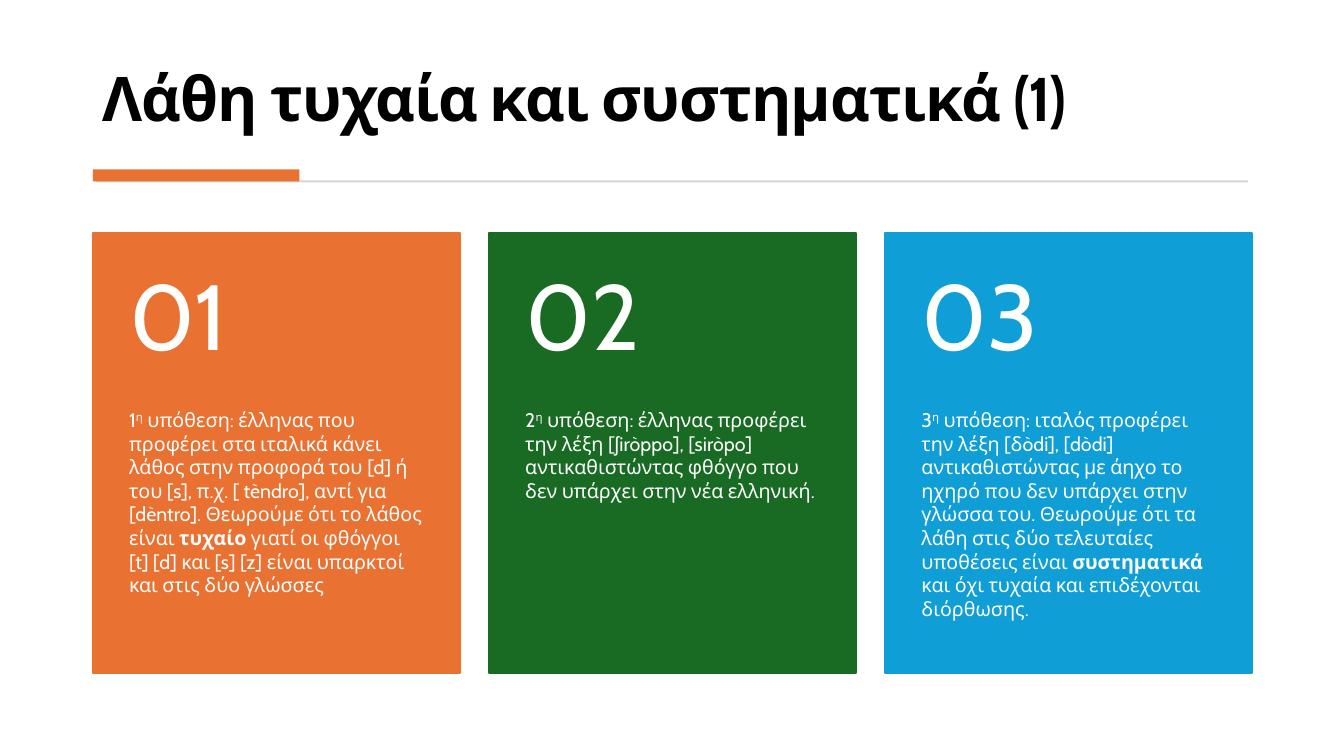
from pptx import Presentation
from pptx.dml.color import RGBColor
from pptx.enum.shapes import MSO_SHAPE
from pptx.enum.text import MSO_ANCHOR, PP_ALIGN
from pptx.util import Pt

PX = 9144
RECT = MSO_SHAPE.RECTANGLE
TOP, MIDDLE, BOTTOM = MSO_ANCHOR.TOP, MSO_ANCHOR.MIDDLE, MSO_ANCHOR.BOTTOM
LEFT = PP_ALIGN.LEFT

FONT = "Cabin"
BLACK = RGBColor(0x00, 0x00, 0x00)
WHITE = RGBColor(0xFF, 0xFF, 0xFF)
GREY = RGBColor(0xD5, 0xD5, 0xD5)
ORANGE = RGBColor(0xE9, 0x71, 0x32)
GREEN = RGBColor(0x19, 0x6B, 0x24)
BLUE = RGBColor(0x0F, 0x9E, 0xD5)

PLAIN, BOLD, SUPER = "plain", "bold", "super"

CARDS = [
    (ORANGE, [
        ("1", PLAIN), ("η", SUPER),
        (" υπόθεση: έλληνας που προφέρει στα ιταλικά κάνει λάθος στην προφορά "
         "του [d] ή του [s], π.χ. [ tèndro], αντί για [dèntro]. Θεωρούμε ότι "
         "το λάθος είναι ", PLAIN),
        ("τυχαίο", BOLD),
        (" γιατί οι φθόγγοι [t] [d] και [s] [z] είναι υπαρκτοί και στις δύο "
         "γλώσσες", PLAIN),
    ]),
    (GREEN, [
        ("2", PLAIN), ("η", SUPER),
        (" υπόθεση: έλληνας προφέρει την λέξη [ʃiròppo], [siròpo] "
         "αντικαθιστώντας φθόγγο που δεν υπάρχει στην νέα ελληνική.", PLAIN),
    ]),
    (BLUE, [
        ("3", PLAIN), ("η", SUPER),
        (" υπόθεση: ιταλός προφέρει την λέξη [δòdi], [dòdi] αντικαθιστώντας "
         "με άηχο το ηχηρό που δεν υπάρχει στην γλώσσα του. Θεωρούμε ότι τα "
         "λάθη στις δύο τελευταίες υποθέσεις είναι ", PLAIN),
        ("συστηματικά", BOLD),
        (" και όχι τυχαία και επιδέχονται διόρθωσης.", PLAIN),
    ]),
]


def emu(*lengths):
    return [length * PX for length in lengths]


def add_rect(slide, box, color, line_width=None):
    sp = slide.shapes.add_shape(RECT, *emu(*box))
    sp.shadow.inherit = False
    sp.fill.solid()
    sp.fill.fore_color.rgb = color
    if line_width:
        sp.line.color.rgb = color
        sp.line.width = Pt(line_width)
    else:
        sp.line.fill.background()


def add_text(slide, box, runs, size, color=WHITE, anchor=TOP,
             insets=(10, 5, 10, 5), line_spacing=1.0, tracking=0):
    tf = slide.shapes.add_textbox(*emu(*box)).text_frame
    tf.word_wrap = True
    tf.vertical_anchor = anchor
    (tf.margin_left, tf.margin_top,
     tf.margin_right, tf.margin_bottom) = emu(*insets)
    p = tf.paragraphs[0]
    p.alignment = LEFT
    p.line_spacing = line_spacing
    for text, style in runs:
        r = p.add_run()
        r.text = text
        r.font.name = FONT
        r.font.size = Pt(size)
        r.font.color.rgb = color
        r.font.bold = style == BOLD
        rPr = r.font._element
        if style == SUPER:
            rPr.set("baseline", "30000")
        if tracking:
            rPr.set("spc", str(tracking))


def add_header(slide, box):
    x, y, w, h = box
    add_text(slide, (x, y, w, 111), [("Λάθη τυχαία και συστηματικά (1)", BOLD)],
             44, color=BLACK, anchor=BOTTOM, line_spacing=0.9, tracking=-70)
    add_rect(slide, (x + 3, y + h - 1, w - 6, 2), GREY)
    add_rect(slide, (x, y + h - 12, 205, 12), ORANGE)


def add_card(slide, box, number, color, runs):
    x, y, w, h = box
    head = h * 2 // 5
    add_rect(slide, box, color, line_width=1.5)
    add_text(slide, (x, y + head, w, h - head), runs, 14,
             insets=(36, 0, 36, 36))
    add_text(slide, (x, y, w, head), [(f"{number:02d}", PLAIN)], 66,
             anchor=MIDDLE, insets=(36, 18, 36, 18), line_spacing=0.9)


def add_cards(slide, box, gap):
    x, y, w, h = box
    card_w = (w - gap * (len(CARDS) - 1)) // len(CARDS)
    for i, (color, runs) in enumerate(CARDS):
        card = (x + i * (card_w + gap), y, card_w, h)
        add_card(slide, card, i + 1, color, runs)


def main():
    prs = Presentation()
    prs.slide_width, prs.slide_height = emu(1333, 750)
    slide = prs.slides.add_slide(prs.slide_layouts[6])
    add_header(slide, (92, 28, 1149, 152))
    add_cards(slide, (92, 231, 1150, 437), gap=29)
    prs.save("out.pptx")


if __name__ == "__main__":
    main()
